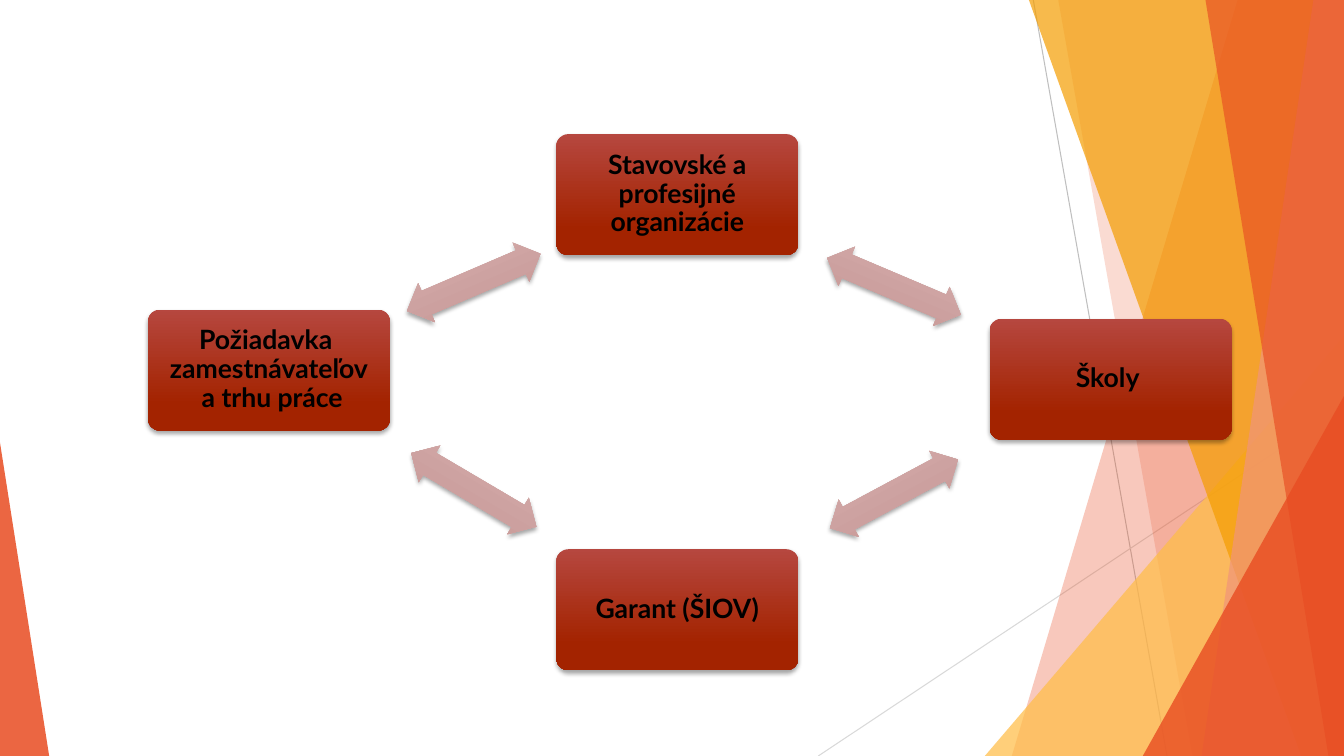
from lxml import etree
from pptx import Presentation
from pptx import util as u
from pptx.dml.color import RGBColor
from pptx.enum import shapes, text
from pptx.oxml import ns

WIDTH, HEIGHT = 33.87, 19.05
BOX_SIZE = (6.1, 3.05)
ARROW_SIZE = (3.66, 1.07)


def rgb(value):
    return RGBColor.from_string(value)


def child(parent, tag, **attrs):
    return etree.SubElement(parent, ns.qn(tag), {k: str(v) for k, v in attrs.items()})


class Diagram:
    font = "Lato"
    size = 19
    ink = "000000"
    box_colors = ("B6473F", "A32300")
    arrow_colors = ("D7B1B0", "C89A98")

    def __init__(self, slide):
        self.s = slide

    def line(self, start, end, color):
        cn = self.s.shapes.add_connector(
            shapes.MSO_CONNECTOR.STRAIGHT, *(u.Cm(v) for v in start + end))
        cn.line.color.rgb = rgb(color)
        cn.line.width = u.Pt(0.75)
        child(cn._element.spPr, "a:effectLst")

    def tint(self, sp, color, opacity):
        sp.shadow.inherit = False
        sp.line.fill.background()
        sp.fill.solid()
        sp.fill.fore_color.rgb = rgb(color)
        clr = sp._element.spPr.find(".//" + ns.qn("a:srgbClr"))
        child(clr, "a:alpha", val=opacity * 1000)

    def band(self, top_x, bottom_x, color, opacity):
        fb = self.s.shapes.build_freeform(u.Cm(top_x), 0)
        corners = [(WIDTH, 0), (WIDTH, HEIGHT), (bottom_x, HEIGHT)]
        fb.add_line_segments([(u.Cm(x), u.Cm(y)) for x, y in corners])
        self.tint(fb.convert_to_shape(), color, opacity)

    def shape(self, kind, left, top, width, height, *adjustments):
        sp = self.s.shapes.add_shape(
            kind, u.Cm(left), u.Cm(top), u.Cm(width), u.Cm(height))
        for i, value in enumerate(adjustments):
            sp.adjustments[i] = value
        return sp

    def triangle(self, left, top, width, apex, color, opacity):
        sp = self.shape(shapes.MSO_SHAPE.ISOSCELES_TRIANGLE,
                        left, top, width, HEIGHT - top, apex)
        self.tint(sp, color, opacity)

    def shade(self, sp, colors):
        sp.line.fill.background()
        sp.fill.gradient()
        sp.fill.gradient_angle = 270
        for stop, color, position in zip(sp.fill.gradient_stops, colors, (0, 0.78)):
            stop.color.rgb = rgb(color)
            stop.position = position
        sp.shadow.inherit = False
        effects = sp._element.spPr.find(ns.qn("a:effectLst"))
        shadow = child(effects, "a:outerShdw", blurRad=u.Pt(3), dist=u.Pt(2),
                       dir=5400000, rotWithShape=0)
        clr = child(shadow, "a:srgbClr", val="000000")
        child(clr, "a:alpha", val=35000)

    def box(self, left, top, paragraphs):
        sp = self.shape(shapes.MSO_SHAPE.ROUNDED_RECTANGLE, left, top, *BOX_SIZE, 0.1)
        self.shade(sp, self.box_colors)
        tf = sp.text_frame
        tf.word_wrap = True
        tf.vertical_anchor = text.MSO_ANCHOR.MIDDLE
        tf.margin_left = tf.margin_right = u.Cm(0.29)
        tf.margin_top = tf.margin_bottom = u.Cm(0.29)
        for i, lines in enumerate(paragraphs):
            p = tf.add_paragraph() if i else tf.paragraphs[0]
            p.alignment = text.PP_ALIGN.CENTER
            p.line_spacing = 0.9
            for j, words in enumerate(lines):
                if j:
                    p.add_line_break()
                r = p.add_run()
                r.text = words
                r.font.name = self.font
                r.font.size = u.Pt(self.size)
                r.font.bold = True
                r.font.color.rgb = rgb(self.ink)

    def arrow(self, left, top, rotation):
        sp = self.shape(shapes.MSO_SHAPE.LEFT_RIGHT_ARROW,
                        left, top, *ARROW_SIZE, 0.6, 0.5)
        sp.rotation = rotation
        self.shade(sp, self.arrow_colors)


def main():
    prs = Presentation()
    prs.slide_width, prs.slide_height = u.Cm(WIDTH), u.Cm(HEIGHT)
    d = Diagram(prs.slides.add_slide(prs.slide_layouts[6]))

    d.line((26.04, 0), (29.41, HEIGHT), "BFBFBF")
    d.line((WIDTH, 10.24), (20.62, HEIGHT), "D9D9D9")
    d.band(31.19, 25.5, "E84C22", 30)
    d.band(26.67, 30.05, "E84C22", 20)
    d.triangle(24.82, 8.46, WIDTH - 24.82, 1, "FFBD47", 72)
    d.band(25.93, 32.79, "F49D00", 70)
    d.band(33.1, 30.28, "F1947A", 70)
    d.band(30.38, 33.48, "E84C22", 65)
    d.triangle(28.8, 9.98, WIDTH - 28.8, 1, "E84C22", 80)
    d.triangle(0, 11.15, 1.24, 0, "E84C22", 85)

    d.box(14.02, 3.38, [["Stavovské a profesijné organizácie"]])
    d.box(24.94, 8.03, [["Školy "]])
    d.box(14.02, 13.84, [["Garant (ŠIOV)"]])
    d.box(3.73, 7.8, [["Požiadavka "], ["zamestnávateľov", " a trhu práce"]])

    for left, top, rotation in [(20.7, 6.68, 23), (20.7, 11.91, 331.8),
                                (10.11, 11.81, 30.5), (10.11, 6.58, 336.8)]:
        d.arrow(left, top, rotation)

    prs.save("out.pptx")


if __name__ == "__main__":
    main()
